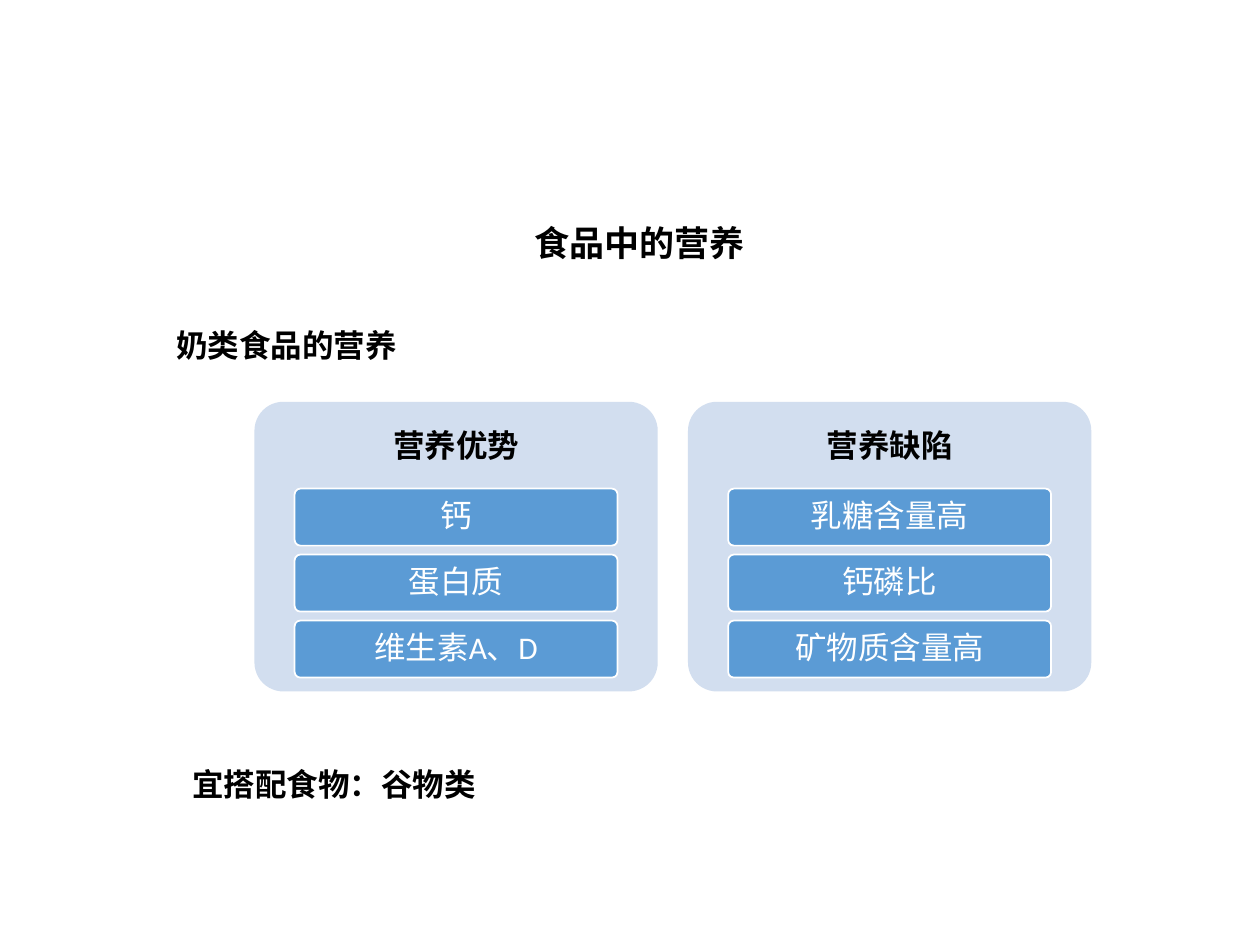
from dataclasses import dataclass

from pptx import Presentation
from pptx.dml.color import RGBColor
from pptx.enum.shapes import MSO_SHAPE
from pptx.enum.text import MSO_ANCHOR, PP_ALIGN
from pptx.util import Cm, Pt

ROUNDED = MSO_SHAPE.ROUNDED_RECTANGLE
LEFT, CENTER = PP_ALIGN.LEFT, PP_ALIGN.CENTER
TOP, MIDDLE = MSO_ANCHOR.TOP, MSO_ANCHOR.MIDDLE

BLACK = RGBColor(0x00, 0x00, 0x00)
WHITE = RGBColor(0xFF, 0xFF, 0xFF)
PALE_BLUE = RGBColor(0xD2, 0xDE, 0xEF)
BLUE = RGBColor(0x5B, 0x9B, 0xD5)

# Panel geometry in centimetres
PANEL_LEFT, PANEL_TOP = 5.13, 8.1
PANEL_W, PANEL_H, PANEL_PITCH = 8.13, 5.84, 8.74
HEAD_H = 1.75
ITEM_INDENT, ITEM_H, ITEM_PITCH = 0.81, 1.15, 1.33


@dataclass
class Box:
    left: float
    top: float
    width: float
    height: float

    def lengths(self) -> tuple:
        return Cm(self.left), Cm(self.top), Cm(self.width), Cm(self.height)


@dataclass
class Label:
    text: str
    box: Box
    size: int = 18
    font: str = "Noto Sans CJK SC"
    align: PP_ALIGN = LEFT
    anchor: MSO_ANCHOR = TOP


@dataclass
class Panel:
    heading: str
    items: list[str]


LABELS = [
    Label("食品中的营养", Box(2.51, 4.34, 20.78, 1.12), 20, "Arial", CENTER),
    Label("奶类食品的营养", Box(3.3, 6.45, 19.3, 1.02)),
    Label("宜搭配食物：谷物类", Box(3.63, 15.29, 19.3, 1.02)),
]
PANELS = [
    Panel("营养优势", ["钙", "蛋白质", "维生素A、D"]),
    Panel("营养缺陷", ["乳糖含量高", "钙磷比", "矿物质含量高"]),
]


def add_label(shapes, label: Label) -> None:
    tf = shapes.add_textbox(*label.box.lengths()).text_frame
    tf.word_wrap = True
    tf.vertical_anchor = label.anchor
    p = tf.paragraphs[0]
    p.text = label.text
    p.alignment = label.align
    p.font.size = Pt(label.size)
    p.font.name = label.font
    p.font.bold = True
    p.font.color.rgb = BLACK


def add_rounded(shapes, box: Box, fill: RGBColor):
    sp = shapes.add_shape(ROUNDED, *box.lengths())
    sp.adjustments[0] = 0.1
    sp.shadow.inherit = False
    sp.fill.solid()
    sp.fill.fore_color.rgb = fill
    return sp


def add_item(shapes, text: str, box: Box) -> None:
    sp = add_rounded(shapes, box, BLUE)
    sp.line.color.rgb = WHITE
    sp.line.width = Pt(1)
    tf = sp.text_frame
    tf.word_wrap = True
    tf.vertical_anchor = MIDDLE
    tf.margin_left = tf.margin_right = Cm(0.13)
    tf.margin_top = tf.margin_bottom = Cm(0.1)
    p = tf.paragraphs[0]
    p.text = text
    p.alignment = CENTER
    p.line_spacing = 0.9
    p.font.size = Pt(18)
    p.font.name = "Calibri"
    p.font.color.rgb = WHITE


def add_panel(shapes, panel: Panel, left: float) -> None:
    sp = add_rounded(shapes, Box(left, PANEL_TOP, PANEL_W, PANEL_H), PALE_BLUE)
    sp.line.fill.background()
    head = Box(left, PANEL_TOP, PANEL_W, HEAD_H)
    add_label(shapes, Label(panel.heading, head, font="Calibri",
                            align=CENTER, anchor=MIDDLE))
    for row, text in enumerate(panel.items):
        top = PANEL_TOP + HEAD_H + row * ITEM_PITCH
        add_item(shapes, text, Box(left + ITEM_INDENT, top,
                                   PANEL_W - 2 * ITEM_INDENT, ITEM_H))


def main() -> None:
    prs = Presentation()
    prs.slide_width, prs.slide_height = Cm(25.4), Cm(19.05)
    s = prs.slides.add_slide(prs.slide_layouts[6])

    # Title, subtitle and closing line
    for label in LABELS:
        add_label(s.shapes, label)

    # Strengths and weaknesses side by side
    for col, panel in enumerate(PANELS):
        add_panel(s.shapes, panel, PANEL_LEFT + col * PANEL_PITCH)

    prs.save("out.pptx")


if __name__ == "__main__":
    main()
